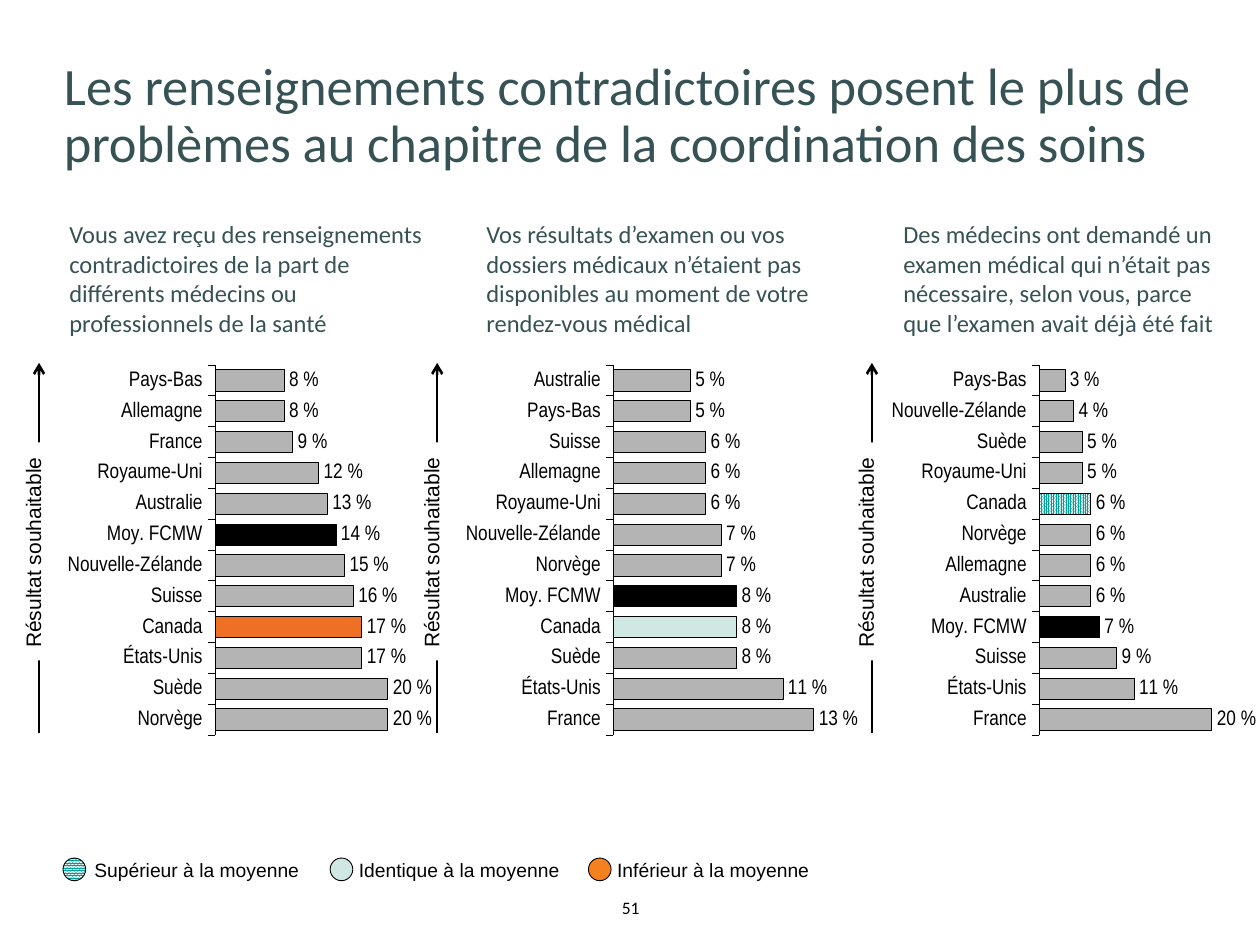
from dataclasses import dataclass

from lxml.etree import SubElement
from pptx import Presentation
from pptx.chart.data import CategoryChartData as ChartData
from pptx.dml.color import RGBColor as Rgb
from pptx.enum.chart import XL_CHART_TYPE as Kind
from pptx.enum.chart import XL_LABEL_POSITION as Spot
from pptx.enum.chart import XL_TICK_LABEL_POSITION as Label
from pptx.enum.chart import XL_TICK_MARK as Tick
from pptx.enum.dml import MSO_PATTERN as Pattern
from pptx.enum.shapes import MSO_CONNECTOR as Link
from pptx.enum.shapes import MSO_SHAPE as Form
from pptx.enum.text import MSO_ANCHOR as Anchor
from pptx.enum.text import PP_ALIGN as Align
from pptx.oxml.ns import qn
from pptx.util import Inches, Pt

COLOURS = {
    "ink": "000000", "paper": "FFFFFF", "title": "365254", "bar": "B4B4B4",
    "above": "00A199", "same": "CFE8E3", "below": "ED7024", "key": "F48120",
}
MEAN = "Moy. FCMW"
PERCENT = "0\\ %"
PLOT = {"x": 0.369, "y": 0.12, "w": 0.496, "h": 0.844}


@dataclass
class Panel:
    text: str
    left: float
    width: float
    arrow: float
    chart: float
    top: float
    mark: str
    rates: dict[str, int]


@dataclass
class Key:
    text: str
    dot: float
    left: float
    width: float
    fill: str


PANELS = [
    Panel("Vous avez reçu des renseignements contradictoires de la part de "
          "différents médecins ou professionnels de la santé",
          0.43, 3.07, 0.31, 0.43, 0.25, "below",
          {"Norvège": 20, "Suède": 20, "États-Unis": 17, "Canada": 17,
           "Suisse": 16, "Nouvelle-Zélande": 15, MEAN: 14, "Australie": 13,
           "Royaume-Uni": 12, "France": 9, "Allemagne": 8, "Pays-Bas": 8}),
    Panel("Vos résultats d’examen ou vos dossiers médicaux n’étaient pas "
          "disponibles au moment de votre rendez-vous médical",
          3.74, 2.83, 3.47, 3.59, 0.14, "same",
          {"France": 13, "États-Unis": 11, "Suède": 8, "Canada": 8,
           MEAN: 8, "Norvège": 7, "Nouvelle-Zélande": 7, "Royaume-Uni": 6,
           "Allemagne": 6, "Suisse": 6, "Pays-Bas": 5, "Australie": 5}),
    Panel("Des médecins ont demandé un examen médical qui n’était pas "
          "nécessaire, selon vous, parce\nque l’examen avait déjà été fait",
          7.05, 3.23, 6.92, 6.97, 0.25, "above",
          {"France": 20, "États-Unis": 11, "Suisse": 9, MEAN: 7,
           "Australie": 6, "Allemagne": 6, "Norvège": 6, "Canada": 6,
           "Royaume-Uni": 5, "Suède": 5, "Nouvelle-Zélande": 4, "Pays-Bas": 3}),
]
KEYS = [
    Key("Supérieur à la moyenne", 0.5, 0.65, 2.05, "above"),
    Key("Identique à la moyenne", 2.62, 2.75, 1.84, "same"),
    Key("Inférieur à la moyenne", 4.67, 4.8, 1.84, "key"),
]


def tint(name: str) -> Rgb:
    return Rgb.from_string(COLOURS[name])


def apply(item, values: dict) -> None:
    """Set each named attribute of item."""
    for name, value in values.items():
        setattr(item, name, value)


def paint(fill, name: str) -> None:
    """Fill with a colour; "above" is always dotted."""
    if name == "above":
        fill.patterned()
        fill.pattern = Pattern.PERCENT_90
        fill.fore_color.rgb = tint(name)
        fill.back_color.rgb = tint("paper")
    else:
        fill.solid()
        fill.fore_color.rgb = tint(name)


def draw_edge(line, width: float = 0.5) -> None:
    paint(line.fill, "ink")
    line.width = Pt(width)


def write(shape, text: str, size: float, face: str, hue: str = "ink",
          inset: float | None = None, **layout) -> None:
    frame = shape.text_frame
    apply(frame, {"word_wrap": True, "vertical_anchor": Anchor.TOP})
    if inset is not None:
        sides = ("left", "top", "right", "bottom")
        apply(frame, {f"margin_{side}": Inches(inset) for side in sides})
    par = frame.paragraphs[0]
    par.text = text
    apply(par, layout)
    for run in par.runs:
        apply(run.font, {"size": Pt(size), "name": face})
        run.font.color.rgb = tint(hue)


def add_box(slide, left: float, top: float, width: float, height: float):
    return slide.shapes.add_textbox(*map(Inches, (left, top, width, height)))


def add_form(slide, form: Form, fill: str, *place: float):
    shape = slide.shapes.add_shape(form, *map(Inches, place))
    shape.shadow.inherit = False
    paint(shape.fill, fill)
    return shape


def add_arrow(slide, x: float) -> None:
    """Draw the upward arrow with its sideways caption over the middle."""
    line = slide.shapes.add_connector(
        Link.STRAIGHT, *map(Inches, (x, 5.82, x, 2.88)))
    draw_edge(line.line, 1.5)
    SubElement(line.line._get_or_add_ln(), qn("a:tailEnd"), type="arrow")
    SubElement(line._element.spPr, qn("a:effectLst"))
    label = add_form(slide, Form.RECTANGLE, "paper", x - 0.2, 3.51, 0.4, 1.73)
    label.line.fill.background()
    label.rotation = 180
    write(label, "Résultat souhaitable ", 12, "Arial", alignment=Align.CENTER)
    label.text_frame._txBody.bodyPr.set("vert", "eaVert")


def set_plot(chart) -> None:
    """Fix the inner plot area as shares of the chart."""
    area = chart._chartSpace.chart.plotArea
    for old in area.findall(qn("c:layout")):
        area.remove(old)
    layout = SubElement(area, qn("c:layout"))
    area.insert(0, layout)
    manual = SubElement(layout, qn("c:manualLayout"))
    values = {"layoutTarget": "inner", "xMode": "edge", "yMode": "edge", **PLOT}
    for name, value in values.items():
        SubElement(manual, qn(f"c:{name}"), val=str(value))


def add_bars(slide, panel: Panel) -> None:
    data = ChartData(number_format=PERCENT)
    data.categories = list(panel.rates)
    data.add_series("Series 1", [rate / 100 for rate in panel.rates.values()])
    place = map(Inches, (panel.chart, 2.48, 3.46, 3.48))
    chart = slide.shapes.add_chart(Kind.BAR_CLUSTERED, *place, data).chart
    apply(chart, {"has_legend": False, "has_title": False})
    apply(chart.font, {"size": Pt(12), "name": "Arial Narrow"})
    chart.font.color.rgb = tint("ink")
    set_plot(chart)
    axis = chart.value_axis
    apply(axis, {"minimum_scale": 0, "maximum_scale": panel.top,
                 "has_major_gridlines": False,
                 "major_tick_mark": Tick.OUTSIDE,
                 "tick_label_position": Label.NONE})
    axis.format.line.fill.background()
    chart.category_axis.major_tick_mark = Tick.OUTSIDE
    draw_edge(chart.category_axis.format.line)
    plot = chart.plots[0]
    apply(plot, {"gap_width": 45, "vary_by_categories": False,
                 "has_data_labels": True})
    apply(plot.data_labels, {"show_value": True, "position": Spot.OUTSIDE_END,
                             "number_format": PERCENT,
                             "number_format_is_linked": False})
    bars = plot.series[0]
    paint(bars.format.fill, "bar")
    draw_edge(bars.format.line)
    marks = {"Canada": panel.mark, MEAN: "ink"}
    for index, land in enumerate(panel.rates):
        if land in marks:
            style = bars.points[index].format
            paint(style.fill, marks[land])
            draw_edge(style.line)


def add_key(slide, key: Key) -> None:
    box = add_box(slide, key.left, 6.76, key.width, 0.29)
    write(box, key.text, 11, "Arial")
    dot = add_form(slide, Form.OVAL, key.fill, key.dot, 6.81, 0.18, 0.18)
    draw_edge(dot.line)


def main() -> None:
    deck = Presentation()
    apply(deck, {"slide_width": Inches(10), "slide_height": Inches(7.5)})
    slide = deck.slides.add_slide(deck.slide_layouts[6])
    write(add_box(slide, 4.69, 7.12, 0.63, 0.17), "51", 10, "Calibri",
          inset=0, alignment=Align.CENTER)
    write(add_box(slide, 0.41, 0.41, 9.4, 1.49),
          "Les renseignements contradictoires posent le plus de problèmes "
          "au chapitre de la coordination des soins",
          30, "Calibri", "title", line_spacing=Pt(33))
    for panel in PANELS:
        add_arrow(slide, panel.arrow)
        add_bars(slide, panel)
        write(add_box(slide, panel.left, 1.62, panel.width, 1.18),
              panel.text, 14, "Calibri", "title", inset=0.12)
    for key in KEYS:
        add_key(slide, key)
    deck.save("out.pptx")


if __name__ == "__main__":
    main()
